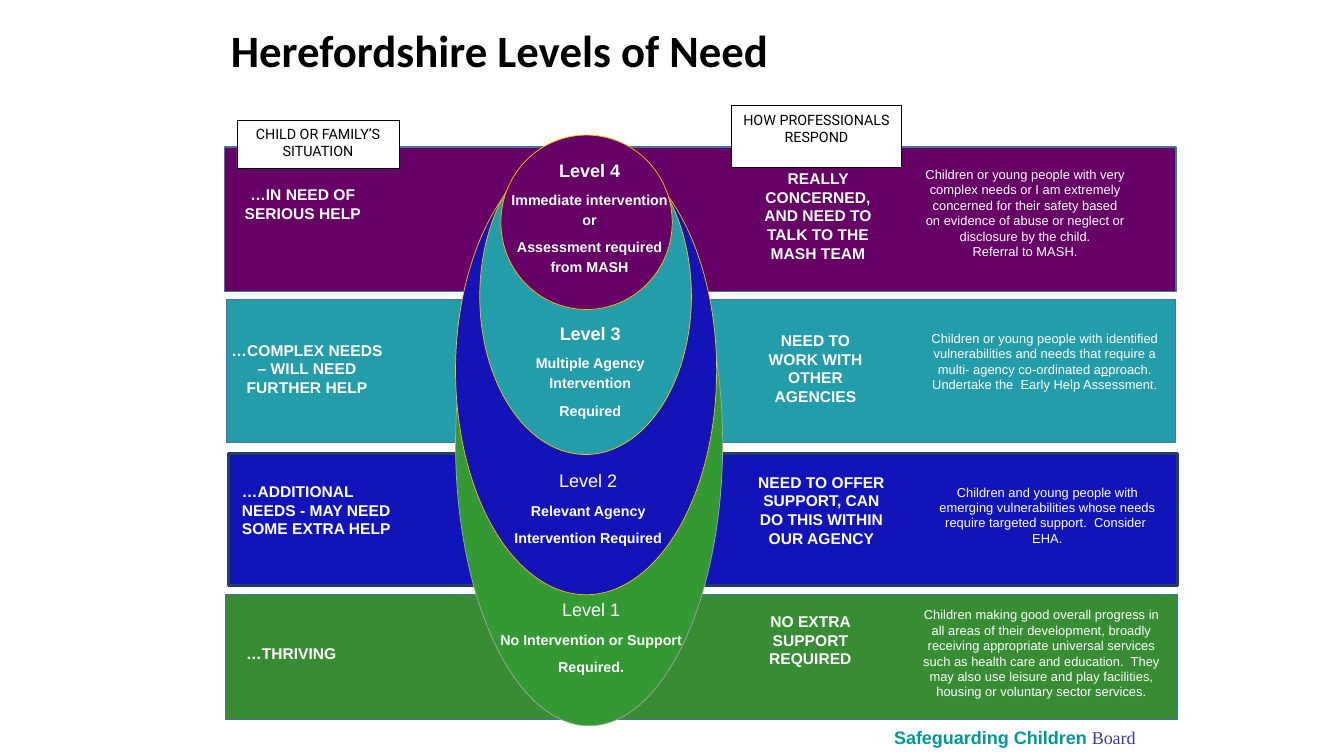
"""Build the Herefordshire Levels of Need slide."""
import pptx
import pptx.dml.color
import pptx.enum.shapes
import pptx.enum.text
import pptx.util

Pt = pptx.util.Pt
Shape = pptx.enum.shapes.MSO_SHAPE
Align = pptx.enum.text.PP_ALIGN
Anchor = pptx.enum.text.MSO_ANCHOR
colour = pptx.dml.color.RGBColor.from_string

PURPLE, TEAL, GREEN, WHITE, GOLD = "660066", "249DAA", "388C34", "FFFFFF", "FFC000"


def draw(kind, place, fill, line, weight):
    shape = page.shapes.add_shape(kind, *map(Pt, place))
    shape.shadow.inherit = False
    shape.fill.solid()
    shape.fill.fore_color.rgb = colour(fill)
    shape.line.color.rgb = colour(line)
    shape.line.width = Pt(weight)
    return shape


def write(box, paragraphs, side=0, anchor=Anchor.TOP, **layout):
    frame = box.text_frame
    frame_format = {"word_wrap": True, "vertical_anchor": anchor,
                    "auto_size": pptx.enum.text.MSO_AUTO_SIZE.NONE,
                    "margin_left": Pt(side), "margin_right": Pt(side),
                    "margin_top": Pt(3.6), "margin_bottom": Pt(3.6)}
    for name, value in frame_format.items():
        setattr(frame, name, value)
    for index, spans in enumerate(paragraphs):
        para = frame.add_paragraph() if index else frame.paragraphs[0]
        for name, value in ({"alignment": Align.CENTER} | layout).items():
            setattr(para, name, value)
        for text, look in spans:
            span = para.add_run()
            span.text = text
            span.font.color.rgb = colour(look.get("ink", WHITE))
            for name, value in look.items():
                if name != "ink":
                    setattr(span.font, name, value)


deck = pptx.Presentation()
deck.slide_width, deck.slide_height = Pt(960), Pt(540)
page = deck.slides.add_slide(deck.slide_layouts[5])

title = page.shapes.title
title_place = {"left": 158.4, "top": 16.6, "width": 615.6, "height": 70.6}
for name, value in title_place.items():
    setattr(title, name, Pt(value))
title_look = {"name": "Calibri", "size": Pt(32), "bold": True, "ink": "000000"}
write(title, [[("Herefordshire Levels of Need", title_look)]], 6.5,
      alignment=Align.LEFT, line_spacing=0.9)

footer = page.shapes.add_textbox(Pt(638.6), Pt(515), Pt(237), Pt(24))
write(footer, [[
    ("Safeguarding Children ", {"name": "Arial", "size": Pt(12.9), "bold": True, "ink": "009999"}),
    ("Board", {"name": "Times New Roman", "size": Pt(12.9), "ink": "3C3C94"}),
]], alignment=Align.LEFT)

bands = [
    ((160.5, 105.1, 679.6, 103), PURPLE, "43739E", 1),
    ((162, 213.8, 677.5, 102.2), TEAL, "43739E", 1),
    ((163.4, 324, 677.5, 94.3), "1115B9", "243F60", 2),
    ((161.3, 424.8, 679.7, 89.3), GREEN, "43739E", 1),
]
for band in bands:
    draw(Shape.RECTANGLE, *band)

detail = {"name": "Arial", "size": Pt(9.2)}
details = [
    ((660.2, 105.1, 144, 93.6), [
        [("Children or young people with very complex needs or I am extremely concerned "
          "for their safety based on evidence of abuse or neglect or disclosure by the child.",
          detail)],
        [("Referral to MASH.", detail)]]),
    ((660.2, 214.6, 172.1, 87.1), [
        [("Children or young people with identified vulnerabilities and needs that require a "
          "multi- agency co-ordinated a", detail),
         ("p", detail | {"underline": True}), ("proach.", detail)],
        [("Undertake the  Early Help Assessment.", detail)]]),
    ((666, 323.3, 164.2, 89.3), [
        [("Children and young people with emerging vulnerabilities whose needs require "
          "targeted support.  Consider  EHA.", detail)]]),
    ((658.1, 421.9, 171.4, 89.3), [
        [("Children making good overall progress in all areas of their development, broadly "
          "receiving appropriate universal services such as health care and education.  They "
          "may also use leisure and play facilities, housing or voluntary sector services.",
          detail)]]),
]
for place, paragraphs in details:
    write(page.shapes.add_textbox(*map(Pt, place)), paragraphs, anchor=Anchor.MIDDLE)

ellipses = [
    ((325.4, 115.9, 190.8, 402.5), "339933", "A5A5A5"),
    ((325.4, 104.4, 186.5, 320.4), "1313B7", GOLD),
    ((342.7, 98.6, 151.2, 226.1), TEAL, GOLD),
    ((357.8, 96.5, 122.4, 124.6), PURPLE, GOLD),
]
for place, fill, line in ellipses:
    draw(Shape.OVAL, place, fill, line, 0.5)

levels = [
    ((357.8, 108, 126.7, 115.2), "Level 4", True,
     ["Immediate intervention or", "Assessment required from MASH"]),
    ((358.6, 224.6, 126, 82.1), "Level 3", True,
     ["Multiple Agency Intervention", "Required"]),
    ((341.3, 329.8, 157.7, 107.3), "Level 2", False,
     ["Relevant Agency", "Intervention Required"]),
    ((343.4, 421.9, 157.7, 107.3), "Level 1", False,
     ["No Intervention or Support", "Required."]),
]
for place, heading, strong, actions in levels:
    paragraphs = [[(heading, {"name": "Arial", "size": Pt(12.9), "bold": strong})]]
    paragraphs += [[(action, {"name": "Arial", "size": Pt(10.2), "bold": True})]
                   for action in actions]
    write(page.shapes.add_textbox(*map(Pt, place)), paragraphs, 6.5,
          line_spacing=1.15, space_before=Pt(3.7), space_after=Pt(1.9))

statements = [
    ((170.6, 98.6, 91.4, 93.6), "…IN NEED OF SERIOUS HELP", Align.CENTER),
    ((164.2, 219.6, 110.2, 87.1), "…COMPLEX NEEDS – WILL NEED FURTHER HELP", Align.CENTER),
    ((172.8, 319.7, 109.4, 89.3), "…ADDITIONAL NEEDS - MAY NEED SOME EXTRA HELP", Align.LEFT),
    ((161.3, 421.9, 93.6, 89.3), "…THRIVING", Align.CENTER),
    ((538.6, 107.3, 91.4, 93.6), "REALLY CONCERNED, AND NEED TO TALK TO THE MASH TEAM",
     Align.CENTER),
    ((542.2, 219.6, 80.6, 87.1), "NEED TO WORK WITH OTHER AGENCIES", Align.CENTER),
    ((537.8, 319.7, 97.9, 89.3), "NEED TO OFFER SUPPORT, CAN DO THIS WITHIN OUR AGENCY",
     Align.CENTER),
    ((540.7, 419, 76.3, 76.3), "NO EXTRA SUPPORT REQUIRED", Align.CENTER),
]
statement_look = {"name": "Arial", "size": Pt(11.1), "bold": True}
for place, text, alignment in statements:
    write(page.shapes.add_textbox(*map(Pt, place)), [[(text, statement_look)]],
          anchor=Anchor.MIDDLE, alignment=alignment)

labels = [
    ((169.2, 85.7, 115.9, 34.6), ["CHILD OR FAMILY’S", "SITUATION"]),
    ((522.7, 75.6, 121, 43.9), ["HOW PROFESSIONALS RESPOND"]),
]
label_look = {"name": "Roboto", "size": Pt(10.2), "ink": "000000"}
for place, lines in labels:
    label = draw(Shape.RECTANGLE, place, WHITE, "000000", 0.5)
    write(label, [[(line, label_look)] for line in lines], 6.5)

deck.save("out.pptx")
